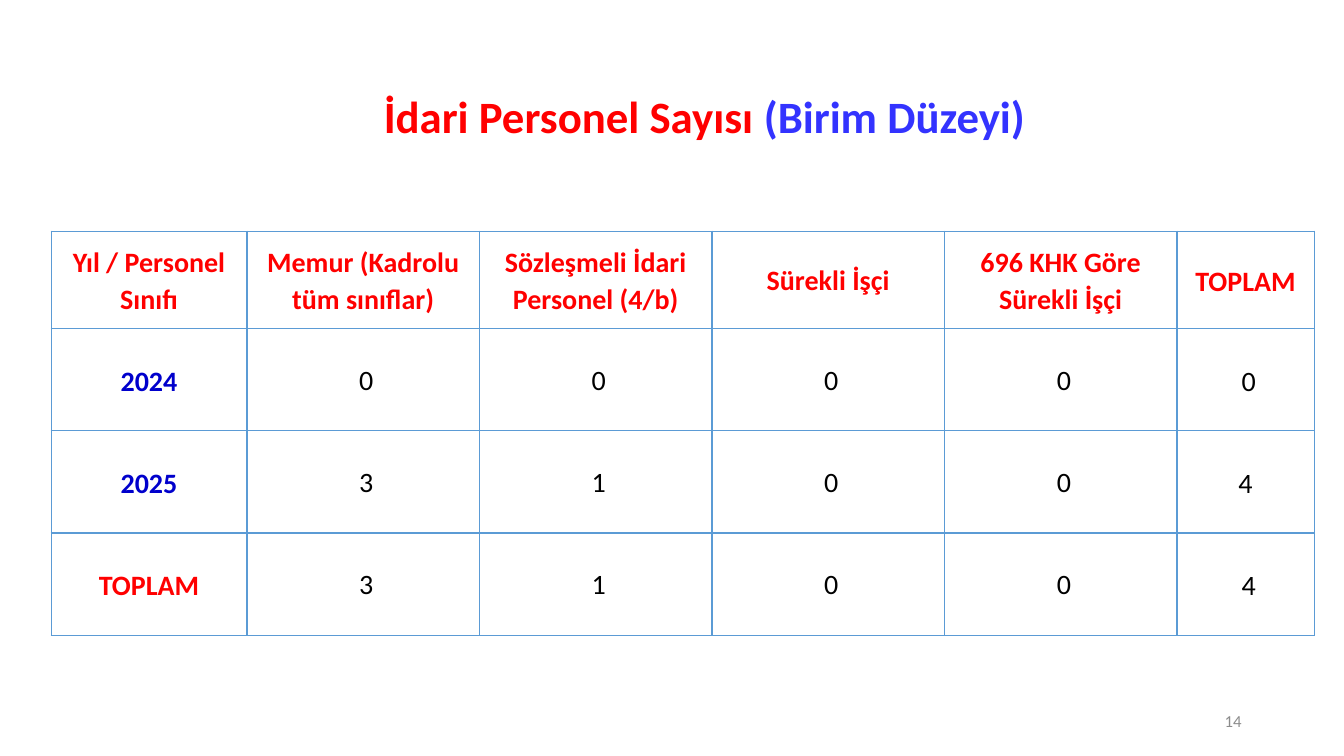
from lxml import etree
from pptx import Presentation
from pptx.dml import color
from pptx.enum import text as t
from pptx.oxml import ns
from pptx.util import Pt

RED, BLUE, NAVY, BLACK, GRAY, BORDER = "FF0000", "3333FF", "0000CC", "000000", "8C8C8C", "5B9BD5"
TITLE = [("İdari Personel Sayısı ", RED), ("(Birim Düzeyi)", BLUE)]
HEADINGS = ["Yıl / Personel Sınıfı", "Memur (Kadrolu tüm sınıflar)", "Sözleşmeli İdari Personel (4/b)",
            "Sürekli İşçi", "696 KHK Göre Sürekli İşçi", "TOPLAM"]
COUNTS = [
    ("2024", NAVY, [" 0", " 0", " 0", " 0", " 0"]),
    ("2025", NAVY, [" 3", " 1", " 0", " 0", "4"]),
    ("TOPLAM", RED, [" 3", " 1", " 0", " 0", " 4"]),
]
PAGE_NUMBER = "14"
COLUMN_WIDTHS = [139.8] + [166.1] * 4 + [98]
ROW_HEIGHTS = [69.6] + [73] * 3


def rgb(value):
    return color.RGBColor.from_string(value)


def write(paragraph, words, size=20, fill=BLACK, bold=False, align=t.PP_ALIGN.CENTER, spacing=1.0):
    paragraph.alignment = align
    paragraph.line_spacing = spacing
    run = paragraph.add_run()
    run.text = words
    run.font.name = "Calibri"
    run.font.size = Pt(size)
    run.font.bold = bold
    run.font.color.rgb = rgb(fill)


def outline(cell):
    properties = cell._tc.get_or_add_tcPr()
    for position, side in enumerate(("lnL", "lnR", "lnT", "lnB")):
        line = etree.Element(ns.qn(f"a:{side}"), w=str(Pt(1)))
        solid = etree.SubElement(line, ns.qn("a:solidFill"))
        etree.SubElement(solid, ns.qn("a:srgbClr"), val=BORDER)
        properties.insert(position, line)


def fill_cell(cell, words, inset, **style):
    cell.fill.background()
    cell.vertical_anchor = t.MSO_ANCHOR.MIDDLE
    cell.margin_left = cell.margin_right = cell.margin_top = Pt(inset)
    cell.margin_bottom = Pt(0)
    write(cell.text_frame.paragraphs[0], words, spacing=1.07, **style)
    outline(cell)


def main():
    deck = Presentation()
    deck.slide_width, deck.slide_height = Pt(960), Pt(540)
    slide = deck.slides.add_slide(deck.slide_layouts[5])

    title = slide.shapes.title
    title.left, title.top, title.width, title.height = Pt(100), Pt(60.5), Pt(806.5), Pt(49)
    title.text_frame.vertical_anchor = t.MSO_ANCHOR.MIDDLE
    for words, fill in TITLE:
        write(title.text_frame.paragraphs[0], words, size=32, fill=fill, bold=True, spacing=0.9)

    rows = [[(heading, RED, True) for heading in HEADINGS]]
    for year, fill, counts in COUNTS:
        rows.append([(year, fill, True)] + [(count, BLACK, False) for count in counts])

    staff = slide.shapes.add_table(len(rows), len(HEADINGS), Pt(36.6), Pt(165.2),
                                   Pt(sum(COLUMN_WIDTHS)), Pt(sum(ROW_HEIGHTS))).table
    staff.first_row = staff.horz_banding = False
    for column, width in zip(staff.columns, COLUMN_WIDTHS):
        column.width = Pt(width)
    for r, entries in enumerate(rows):
        staff.rows[r].height = Pt(ROW_HEIGHTS[r])
        for c, (words, fill, bold) in enumerate(entries):
            inset = 0.7 if c in (0, len(HEADINGS) - 1) else 0
            fill_cell(staff.cell(r, c), words, inset, fill=fill, bold=bold)

    page = slide.shapes.add_textbox(Pt(678), Pt(500.5), Pt(216), Pt(28.8)).text_frame
    page.word_wrap = True
    page.vertical_anchor = t.MSO_ANCHOR.MIDDLE
    write(page.paragraphs[0], PAGE_NUMBER, size=12, fill=GRAY, align=t.PP_ALIGN.RIGHT)

    deck.save("out.pptx")


if __name__ == "__main__":
    main()
